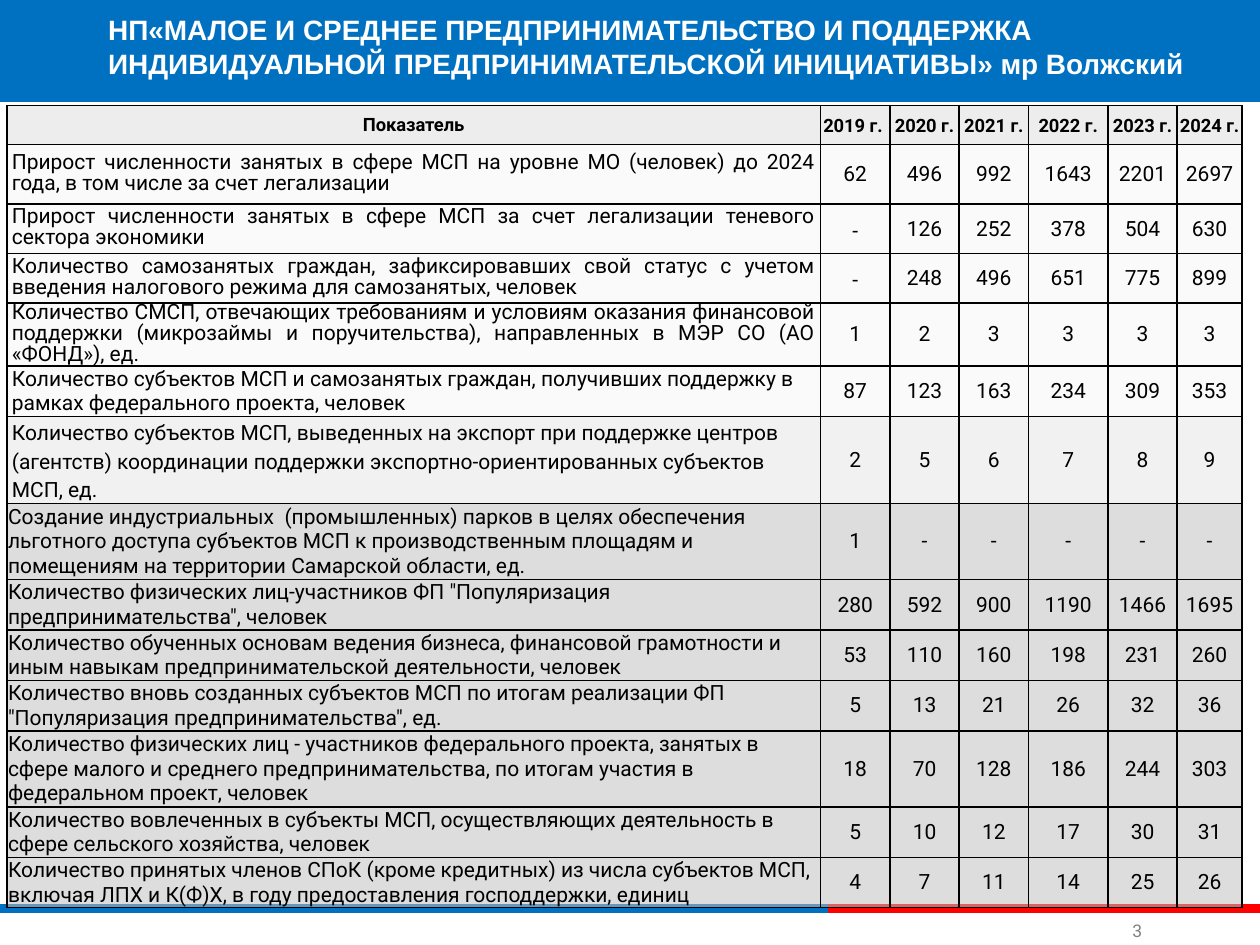
from lxml import etree
from pptx import Presentation
from pptx.dml import color
from pptx.enum import shapes, text
from pptx.oxml import ns
from pptx.util import Pt

HEADING = ("НП«МАЛОЕ И СРЕДНЕЕ ПРЕДПРИНИМАТЕЛЬСТВО И ПОДДЕРЖКА ИНДИВИДУАЛЬНОЙ "
           "ПРЕДПРИНИМАТЕЛЬСКОЙ ИНИЦИАТИВЫ» мр Волжский")
PAGE = "3"
HEADERS = ["Показатель", "2019 г. ", "2020 г.", "2021 г.", "2022 г.", "2023 г.", "2024 г."]
COLUMN_WIDTHS = [465, 39.6, 39.6, 39.6, 45.4, 39.6, 37]
HEADER_HEIGHT = 22.4

INDICATORS = [
    ("justified", 34, "Прирост численности занятых в сфере МСП на уровне МО (человек) до 2024 года, "
     "в том числе за счет легализации", "62 496 992 1643 2201 2697"),
    ("justified", 28.3, "Прирост численности занятых в сфере МСП за счет легализации теневого "
     "сектора экономики", "- 126 252 378 504 630"),
    ("justified", 28.3, "Количество самозанятых граждан, зафиксировавших свой статус с учетом "
     "введения налогового режима для самозанятых, человек", "- 248 496 651 775 899"),
    ("justified", 36, "Количество СМСП, отвечающих требованиям и условиям оказания финансовой "
     "поддержки (микрозаймы и поручительства), направленных в МЭР СО (АО «ФОНД»), ед.",
     "1 2 3 3 3 3"),
    ("light", 28.6, "Количество субъектов МСП и самозанятых граждан, получивших поддержку в рамках "
     "федерального проекта, человек", "87 123 163 234 309 353"),
    ("export", 49.7, "Количество субъектов МСП, выведенных на экспорт при поддержке центров "
     "(агентств) координации поддержки экспортно-ориентированных субъектов МСП, ед.",
     "2 5 6 7 8 9"),
    ("dark", 43.4, "Создание индустриальных  (промышленных) парков в целях обеспечения льготного "
     "доступа субъектов МСП к производственным площадям и помещениям на территории "
     "Самарской области, ед.", "1 - - - - -"),
    ("dark", 28.7, "Количество физических лиц-участников ФП \"Популяризация "
     "предпринимательства\", человек", "280 592 900 1190 1466 1695"),
    ("dark", 28.7, "Количество обученных основам ведения бизнеса, финансовой грамотности и иным "
     "навыкам предпринимательской деятельности, человек", "53 110 160 198 231 260"),
    ("dark", 28.7, "Количество вновь созданных субъектов МСП по итогам реализации ФП "
     "\"Популяризация предпринимательства\", ед.", "5 13 21 26 32 36"),
    ("dark", 43.4, "Количество физических лиц - участников федерального проекта, занятых в сфере "
     "малого и среднего предпринимательства, по итогам участия в федеральном проект, человек",
     "18 70 128 186 244 303"),
    ("dark", 28.7, "Количество вовлеченных в субъекты МСП, осуществляющих деятельность в сфере "
     "сельского хозяйства, человек", "5 10 12 17 30 31"),
    ("dark", 28.7, "Количество принятых членов СПоК (кроме кредитных) из числа субъектов МСП, "
     "включая ЛПХ и К(Ф)Х, в году предоставления господдержки, единиц", "4 7 11 14 25 26"),
]

LEFT, CENTER, JUSTIFY = text.PP_ALIGN.LEFT, text.PP_ALIGN.CENTER, text.PP_ALIGN.JUSTIFY
STYLES = {
    "justified": dict(shade=("F2F2F2", 36), align=JUSTIFY, inset=2.9, spacing=Pt(12), after=6),
    "light": dict(shade=("F2F2F2", 36), align=LEFT, inset=2.9, spacing=1, after=0),
    "export": dict(shade=("D9D9D9", 35), align=LEFT, inset=2.9, spacing=1.15, after=0),
    "dark": dict(shade=("BFBFBF", 52), align=LEFT, inset=0.7, spacing=1, after=0),
}


def rgb(code):
    return color.RGBColor.from_string(code)


def add_run(paragraph, words, size, face, code, bold=False):
    run = paragraph.add_run()
    run.text = words
    run.font.size, run.font.name, run.font.bold = Pt(size), face, bold
    run.font.color.rgb = rgb(code)


def set_insets(frame, size):
    frame.margin_left = frame.margin_right = frame.margin_top = frame.margin_bottom = Pt(size)


def add_stripe(slide, start, end, y, code):
    stripe = slide.shapes.add_connector(
        shapes.MSO_CONNECTOR.STRAIGHT, Pt(start), Pt(y), Pt(end), Pt(y))
    stripe.line.color.rgb = rgb(code)
    stripe.line.width = Pt(5)
    etree.SubElement(stripe._element.spPr, ns.qn("a:effectLst"))


def draw_borders(cell):
    properties = cell._tc.get_or_add_tcPr()
    for side in ("lnL", "lnR", "lnT", "lnB"):
        border = etree.SubElement(properties, ns.qn("a:" + side), w=str(Pt(1)))
        ink = etree.SubElement(border, ns.qn("a:solidFill"))
        etree.SubElement(ink, ns.qn("a:srgbClr"), val="000000")


def fill_cell(cell, words, shade, align=CENTER, inset=0.7, spacing=1, after=0, size=12, bold=False):
    draw_borders(cell)
    code, opacity = shade
    cell.fill.solid()
    cell.fill.fore_color.rgb = rgb(code)
    if opacity < 100:
        tint = cell._tc.tcPr.find(".//" + ns.qn("a:solidFill") + "[last()]/../"
                                  + ns.qn("a:solidFill") + "/" + ns.qn("a:srgbClr")
                                  + "[@val='" + code + "']")
        etree.SubElement(tint, ns.qn("a:alpha"), val=str(opacity * 1000))
    cell.vertical_anchor = text.MSO_ANCHOR.MIDDLE
    cell.margin_left = cell.margin_right = Pt(inset)
    cell.margin_top = cell.margin_bottom = 0
    paragraph = cell.text_frame.paragraphs[0]
    paragraph.alignment = align
    paragraph.line_spacing = spacing
    paragraph.space_after = Pt(after)
    add_run(paragraph, words, size, "Roboto", "000000", bold)


def add_heading(slide):
    band = slide.shapes.add_shape(shapes.MSO_SHAPE.RECTANGLE, 0, Pt(-2.2), Pt(720), Pt(60.5))
    band.shadow.inherit = False
    band.fill.solid()
    band.fill.fore_color.rgb = rgb("0070C1")
    band.line.fill.background()

    title = slide.shapes.title
    slide.shapes._spTree.append(title._element)
    title.left, title.top, title.width, title.height = Pt(58.2), Pt(3.6), Pt(652), Pt(46)
    frame = title.text_frame
    frame.word_wrap = True
    frame.auto_size = text.MSO_AUTO_SIZE.NONE
    frame.vertical_anchor = text.MSO_ANCHOR.TOP
    set_insets(frame, 3.6)
    frame.paragraphs[0].alignment = LEFT
    add_run(frame.paragraphs[0], HEADING, 16, "Arial", "FFFFFF", True)


def add_page_number(slide):
    frame = slide.shapes.add_textbox(Pt(643.5), Pt(523.5), Pt(13.5), Pt(18)).text_frame
    frame.word_wrap = False
    frame.vertical_anchor = text.MSO_ANCHOR.BOTTOM
    set_insets(frame, 3.6)
    add_run(frame.paragraphs[0], PAGE, 10, "Roboto", "808080")


def add_indicators(slide):
    heights = [HEADER_HEIGHT] + [height for _, height, _, _ in INDICATORS]
    table = slide.shapes.add_table(
        len(heights), len(HEADERS), Pt(3.9), Pt(60.3),
        Pt(sum(COLUMN_WIDTHS)), Pt(sum(heights))).table
    table.horz_banding = False
    for column, width in zip(table.columns, COLUMN_WIDTHS):
        column.width = Pt(width)
    for row, height in zip(table.rows, heights):
        row.height = Pt(height)

    for index, header in enumerate(HEADERS):
        fill_cell(table.cell(0, index), header, ("EDEDED", 100), size=10.5, bold=True,
                  spacing=1.15 if index else Pt(12))
    for line, (style, _, indicator, values) in enumerate(INDICATORS, 1):
        look = STYLES[style]
        fill_cell(table.cell(line, 0), indicator, **look)
        for index, value in enumerate(values.split(), 1):
            fill_cell(table.cell(line, index), value, look["shade"],
                      spacing=1.15 if style == "justified" and value == "-" else 1)


def main():
    deck = Presentation()
    deck.slide_width, deck.slide_height = Pt(720), Pt(540)
    slide = deck.slides.add_slide(deck.slide_layouts[5])
    add_stripe(slide, 0, 473, 519.3, "0070C1")
    add_stripe(slide, 473, 720, 519.3, "FF0000")
    add_heading(slide)
    add_page_number(slide)
    add_indicators(slide)
    deck.save("out.pptx")


if __name__ == "__main__":
    main()
